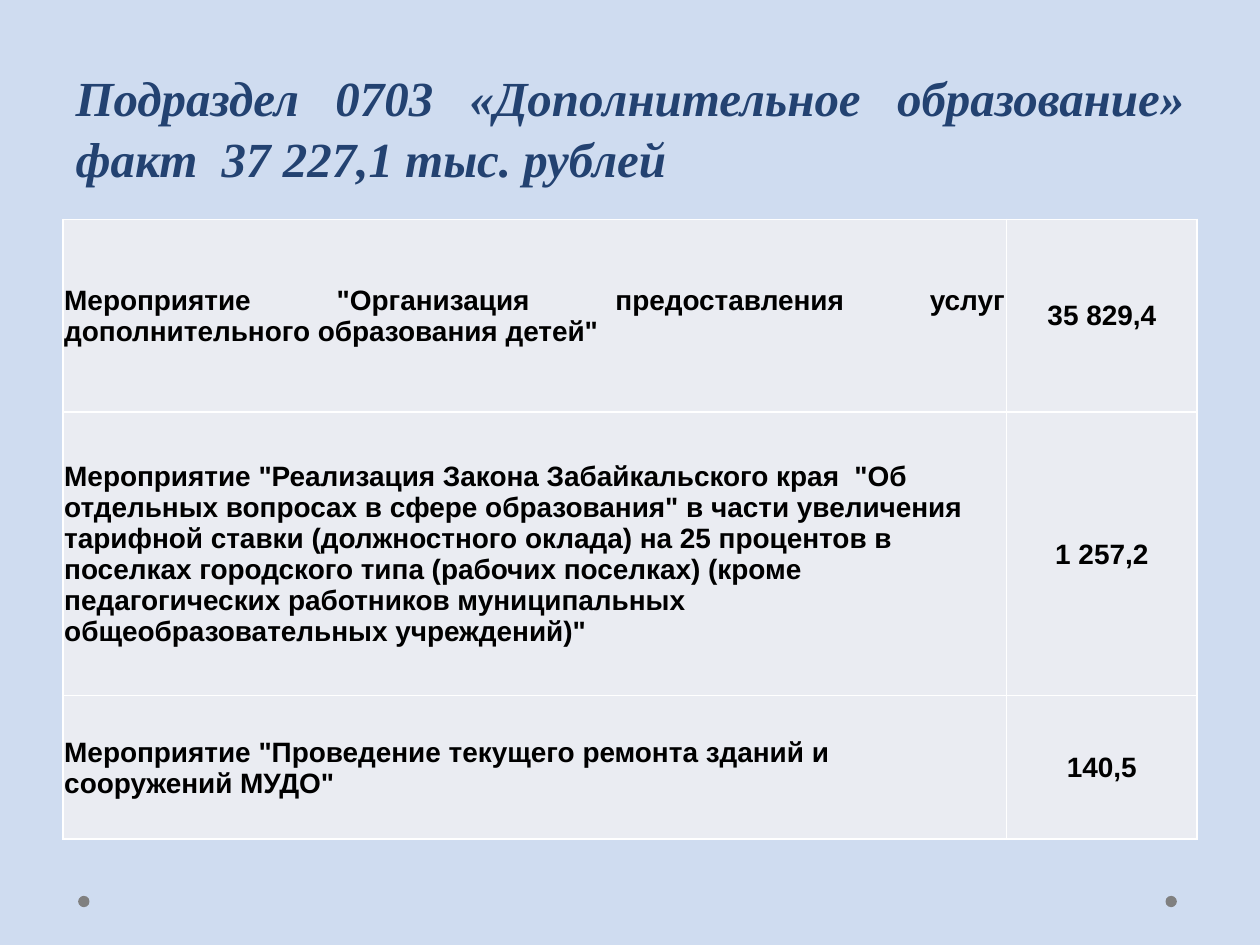
from dataclasses import dataclass

from lxml.etree import SubElement
from pptx import Presentation
from pptx.dml.color import RGBColor
from pptx.enum.shapes import MSO_SHAPE
from pptx.enum.text import MSO_ANCHOR, PP_ALIGN
from pptx.oxml.ns import qn
from pptx.util import Inches, Pt

COLORS = {
    "background": "CFDCF0",
    "title": "234271",
    "cell": "EAECF2",
    "border": "FFFFFF",
    "text": "000000",
    "dot": "808080",
}
COLUMN_WIDTHS = (7.49, 1.51)
DOT_LEFTS = (9.25, 0.62)
DOT_SIZE = 0.09


@dataclass
class Expense:
    name: str
    amount: str
    height: float
    align: PP_ALIGN = PP_ALIGN.LEFT


EXPENSES = [
    Expense('Мероприятие "Организация предоставления услуг дополнительного '
            'образования детей"', "35 829,4", 1.53, PP_ALIGN.JUSTIFY),
    Expense('Мероприятие "Реализация Закона Забайкальского края  "Об отдельных '
            'вопросах в сфере образования" в части увеличения тарифной ставки '
            '(должностного оклада) на 25 процентов в поселках городского типа '
            '(рабочих поселках) (кроме  педагогических работников муниципальных '
            'общеобразовательных учреждений)"', "1 257,2", 2.25),
    Expense('Мероприятие "Проведение текущего ремонта зданий и сооружений МУДО"',
            "140,5", 1.14),
]


def color(name: str) -> RGBColor:
    return RGBColor.from_string(COLORS[name])


def style_para(para, font_name: str, size: int, color_name: str,
               align: PP_ALIGN, italic: bool = False) -> None:
    para.alignment = align
    for span in para.runs:
        font = span.font
        font.name, font.size = font_name, Pt(size)
        font.bold, font.italic = True, italic
        font.color.rgb = color(color_name)


def add_borders(cell) -> None:
    properties = cell._tc.get_or_add_tcPr()
    for index, side in enumerate(("lnL", "lnR", "lnT", "lnB")):
        line = properties.makeelement(qn(f"a:{side}"), {"w": str(Pt(1))})
        fill = SubElement(line, qn("a:solidFill"))
        SubElement(fill, qn("a:srgbClr"), val=COLORS["border"])
        properties.insert(index, line)


def fill_cell(cell, text: str, align: PP_ALIGN) -> None:
    cell.text_frame.text = text
    cell.vertical_anchor = MSO_ANCHOR.MIDDLE
    cell.margin_left = cell.margin_right = cell.margin_top = Inches(0.01)
    cell.margin_bottom = 0
    cell.fill.solid()
    cell.fill.fore_color.rgb = color("cell")
    style_para(cell.text_frame.paragraphs[0], "Arial", 16, "text", align)
    add_borders(cell)


def add_dot(page, left: float) -> None:
    dot = page.shapes.add_shape(MSO_SHAPE.OVAL, Inches(left), Inches(7.11),
                                Inches(DOT_SIZE), Inches(DOT_SIZE))
    dot.shadow.inherit = False
    dot.fill.solid()
    dot.fill.fore_color.rgb = color("dot")
    dot.line.fill.background()


def set_title(page) -> None:
    title = page.shapes.title
    title.left, title.top = Inches(0.5), Inches(-0.19)
    title.width, title.height = Inches(9), Inches(1.73)
    frame = title.text_frame
    frame.text = ("Подраздел 0703 «Дополнительное образование»\v"
                  "факт  37 227,1 тыс. рублей")
    frame.word_wrap = True
    frame.vertical_anchor = MSO_ANCHOR.BOTTOM
    para = frame.paragraphs[0]
    para.line_spacing = 1.05
    style_para(para, "Times New Roman", 28, "title", PP_ALIGN.JUSTIFY, italic=True)


def add_expense_table(page) -> None:
    height = sum(expense.height for expense in EXPENSES)
    table = page.shapes.add_table(
        len(EXPENSES), len(COLUMN_WIDTHS), Inches(0.5), Inches(1.74),
        Inches(sum(COLUMN_WIDTHS)), Inches(height)).table
    table.first_row = table.horz_banding = False
    for column, width in zip(table.columns, COLUMN_WIDTHS):
        column.width = Inches(width)
    for row, expense in zip(table.rows, EXPENSES):
        row.height = Inches(expense.height)
        fill_cell(row.cells[0], expense.name, expense.align)
        fill_cell(row.cells[1], expense.amount, PP_ALIGN.CENTER)


def main() -> None:
    deck = Presentation()
    deck.slide_width, deck.slide_height = Inches(10), Inches(7.5)
    page = deck.slides.add_slide(deck.slide_layouts[5])
    page.background.fill.solid()
    page.background.fill.fore_color.rgb = color("background")
    for left in DOT_LEFTS:
        add_dot(page, left)
    set_title(page)
    add_expense_table(page)
    deck.save("out.pptx")


if __name__ == "__main__":
    main()
